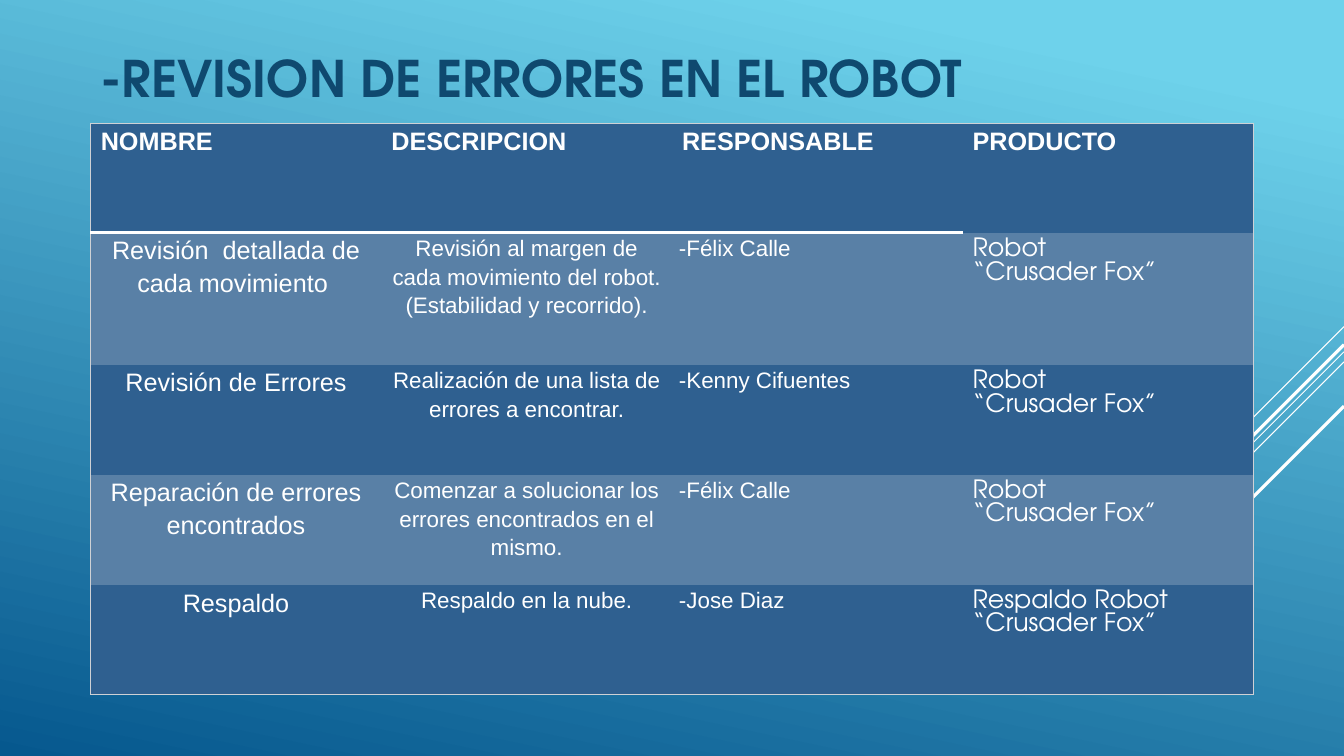
from lxml import etree
from pptx import Presentation
from pptx.dml.color import RGBColor
from pptx.enum import shapes, text
from pptx.oxml import ns
from pptx.util import Inches, Pt

TITLE = "-REVISION DE ERRORES EN EL ROBOT"
HEADERS = ["NOMBRE", "DESCRIPCION", "RESPONSABLE", "PRODUCTO"]
TASKS = [
    ["Revisión  detallada de cada movimiento ",
     "Revisión al margen de cada movimiento del robot.(Estabilidad y recorrido).",
     "-Félix Calle", "Robot\v“Crusader Fox”"],
    ["Revisión de Errores", "Realización de una lista de errores a encontrar.",
     "-Kenny Cifuentes", "Robot\v“Crusader Fox”"],
    ["Reparación de errores encontrados",
     "Comenzar a solucionar los errores encontrados en el mismo.",
     "-Félix Calle", "Robot\v“Crusader Fox”"],
    ["Respaldo", "Respaldo en la nube.", "-Jose Diaz", "Respaldo Robot\v“Crusader Fox”"],
]
ROW_HEIGHTS = [1.09, 1.31, 1.09, 1.09, 1.09]
TABLE_LEFT, TABLE_TOP, TABLE_WIDTH = 0.9, 1.22, 11.53
SLIDE_WIDTH, SLIDE_HEIGHT = 13.33, 7.5
DIAGONALS = [(3.24, 1, 0.75), (3.49, 3.26, 0.75), (3.59, 2.07, 0.75),
             (3.42, 1.91, 2.25), (4.03, 1.39, 2.25)]
COLORS = {"sky": "6ED2EB", "deep": "06588E", "title": "0F496F", "white": "FFFFFF",
          "row": "2F6090", "band": "5980A6", "frame": "CFD1D5"}
BODY_FONT, DISPLAY_FONT = "Arial", "TeX Gyre Adventor"


def color(name):
    return RGBColor.from_string(COLORS[name])


def format_runs(paragraph, font_name, size, color_name, bold=False):
    for run in paragraph.runs:
        run.font.name = font_name
        run.font.size = Pt(size)
        run.font.bold = bold
        run.font.color.rgb = color(color_name)


def set_margins(target, horizontal, vertical):
    target.margin_left = target.margin_right = Inches(horizontal)
    target.margin_top = target.margin_bottom = Inches(vertical)


def add_border(cell, side, color_name, width, opacity=100):
    properties = cell._tc.get_or_add_tcPr()
    line = etree.SubElement(properties, ns.qn(f"a:ln{side}"), w=str(Pt(width)))
    fill = etree.SubElement(line, ns.qn("a:solidFill"))
    rgb = etree.SubElement(fill, ns.qn("a:srgbClr"), val=COLORS[color_name])
    etree.SubElement(rgb, ns.qn("a:alpha"), val=str(opacity * 1000))


def draw_background(slide):
    fill = slide.background.fill
    fill.gradient()
    fill.gradient_angle = 258
    for stop, position, name in zip(fill.gradient_stops, (0.1, 1), ("sky", "deep")):
        stop.position = position
        stop.color.rgb = color(name)


def draw_diagonals(slide):
    for top, reach, width in DIAGONALS:
        ends = (SLIDE_WIDTH, top, SLIDE_WIDTH - reach, top + reach)
        line = slide.shapes.add_connector(
            shapes.MSO_CONNECTOR.STRAIGHT, *map(Inches, ends))
        line.line.color.rgb = color("white")
        line.line.width = Pt(width)
        etree.SubElement(line._element.spPr, ns.qn("a:effectLst"))


def draw_title(slide):
    box = slide.shapes.add_textbox(Inches(0.9), 0, Inches(10.83), Inches(1.62))
    frame = box.text_frame
    frame.word_wrap = True
    frame.vertical_anchor = text.MSO_ANCHOR.MIDDLE
    set_margins(frame, 0.1, 0.05)
    frame.text = TITLE
    frame.paragraphs[0].line_spacing = 0.9
    format_runs(frame.paragraphs[0], DISPLAY_FONT, 36, "title", True)


def fill_cell(cell, content, row, column):
    last_row, last_column = len(TASKS), len(HEADERS) - 1
    header, product = row == 0, column == last_column
    roomy = header or product or (row == last_row and column == 0)
    set_margins(cell, 0.1 if roomy else 0.07, 0.05 if roomy else 0)

    paragraph = cell.text_frame.paragraphs[0]
    paragraph.text = content
    if not roomy:
        paragraph.line_spacing = 1.15
    if not header and column < 2:
        paragraph.alignment = text.PP_ALIGN.CENTER
    font_name = DISPLAY_FONT if product and not header else BODY_FONT
    size = 16 if not header and column in (1, 2) else 18
    format_runs(paragraph, font_name, size, "white", header)

    outer_sides = {"L": column == 0, "R": product, "T": header, "B": row == last_row}
    for side, is_outer in outer_sides.items():
        if is_outer:
            add_border(cell, side, "frame", 0.75, 60)
    if header and not product:
        add_border(cell, "B", "white", 2.25)
    cell.fill.solid()
    cell.fill.fore_color.rgb = color("band" if row % 2 else "row")


def draw_table(slide):
    rows = [HEADERS] + TASKS
    frame = slide.shapes.add_table(
        len(rows), len(HEADERS), Inches(TABLE_LEFT), Inches(TABLE_TOP),
        Inches(TABLE_WIDTH), Inches(sum(ROW_HEIGHTS)))
    table = frame.table
    style = table._tbl.tblPr.find(ns.qn("a:tableStyleId"))
    style.text = "{2D5ABB26-0587-4C30-8999-92F81FD0307C}"
    for column in table.columns:
        column.width = Inches(TABLE_WIDTH / len(HEADERS))
    for row, height in enumerate(ROW_HEIGHTS):
        table.rows[row].height = Inches(height)
        for column, content in enumerate(rows[row]):
            fill_cell(table.cell(row, column), content, row, column)


def main():
    presentation = Presentation()
    presentation.slide_width = Inches(SLIDE_WIDTH)
    presentation.slide_height = Inches(SLIDE_HEIGHT)
    slide = presentation.slides.add_slide(presentation.slide_layouts[6])
    draw_background(slide)
    draw_diagonals(slide)
    draw_title(slide)
    draw_table(slide)
    presentation.save("out.pptx")


if __name__ == "__main__":
    main()
